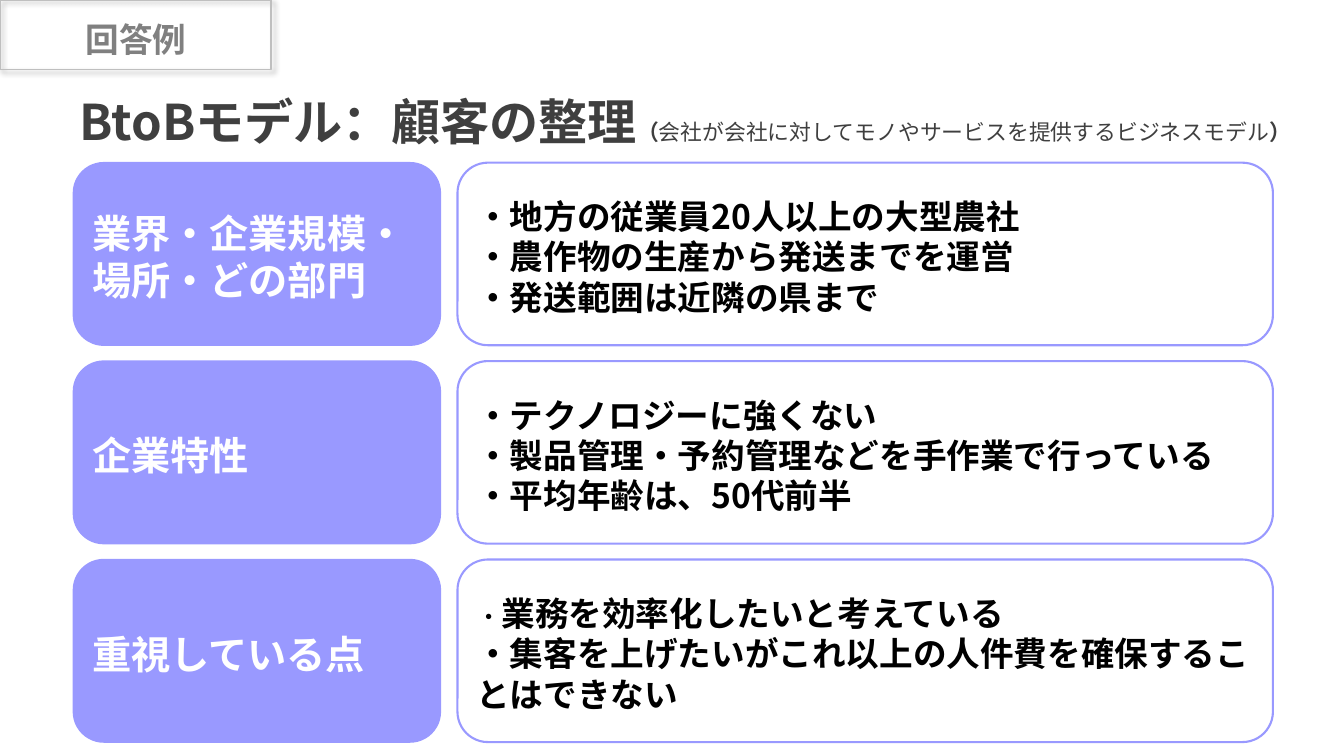
from lxml.etree import SubElement
from pptx import Presentation
from pptx.dml.color import RGBColor
from pptx.enum.shapes import MSO_SHAPE as Shape
from pptx.enum.text import MSO_ANCHOR as Anchor, MSO_AUTO_SIZE as AutoSize, PP_ALIGN as Align
from pptx.oxml.ns import qn
from pptx.util import Cm, Pt

FONT = "Noto Sans CJK JP"
COLORS = {"violet": "9999FF", "white": "FFFFFF", "black": "000000",
          "title": "3F3F3F", "tag": "808080", "border": "BFBFBF"}
LABEL = {"size": Pt(28), "bold": True, "color": "white"}
DETAIL = {"size": Pt(24), "bold": True, "color": "black"}
DOT = {"size": Pt(18), "bold": False, "color": "black"}
HEADING = {"size": Pt(35.1), "bold": True, "color": "title"}
BRACKET = {"size": Pt(15.6), "bold": True, "color": "title"}
REMARK = {"size": Pt(15.6), "bold": False, "color": "title"}
TAG = {"size": Pt(24), "bold": True, "color": "tag"}

ROWS = [
    (["業界・企業規模・", "場所・どの部門"],
     ["・地方の従業員20人以上の大型農社",
      "・農作物の生産から発送までを運営",
      "・発送範囲は近隣の県まで"]),
    (["企業特性"],
     ["・テクノロジーに強くない",
      "・製品管理・予約管理などを手作業で行っている",
      "・平均年齢は、50代前半"]),
    (["重視している点"],
     [[("・", DOT), ("業務を効率化したいと考えている", DETAIL)],
      "・集客を上げたいがこれ以上の人件費を確保することはできない"]),
]


def rgb(name):
    return RGBColor.from_string(COLORS[name])


def set_frame(frame, **formats):
    for name, value in {"word_wrap": True, "auto_size": AutoSize.NONE, **formats}.items():
        setattr(frame, name, value)


def write(frame, lines, style, align=Align.LEFT):
    for index, line in enumerate(lines):
        para = frame.paragraphs[0] if index == 0 else frame.add_paragraph()
        para.alignment = align
        for text, formats in [(line, style)] if isinstance(line, str) else line:
            span = para.add_run()
            span.text = text
            span.font.name = FONT
            SubElement(span.font._element, qn("a:ea"), typeface=FONT)
            for name, value in formats.items():
                if name == "color":
                    span.font.color.rgb = rgb(value)
                else:
                    setattr(span.font, name, value)


def add_panel(shapes, kind, box, line, width, fill=None):
    panel = shapes.add_shape(kind, *map(Cm, box))
    panel.shadow.inherit = False
    if fill:
        panel.fill.solid()
        panel.fill.fore_color.rgb = rgb(fill)
    else:
        panel.fill.background()
    panel.line.color.rgb = rgb(line)
    panel.line.width = Pt(width)
    return panel


def add_row(page, box, label, details):
    left, top, width, height = box
    label_width, gap = 9.25, 0.43
    detail_left = left + label_width + gap
    parts = [
        (label, LABEL, (left, top, label_width, height), 1, "violet"),
        (details, DETAIL, (detail_left, top, left + width - detail_left, height), 1.5, None),
    ]
    for lines, style, place, line_width, fill in parts:
        panel = add_panel(page.shapes, Shape.ROUNDED_RECTANGLE, place, "violet", line_width, fill)
        set_frame(panel.text_frame, vertical_anchor=Anchor.MIDDLE, margin_left=Cm(0.25),
                  margin_right=Cm(0.25), margin_top=Cm(0.13), margin_bottom=0)
        write(panel.text_frame, lines, style)


def add_rows(page, box):
    left, top, width, height = box
    gap = 0.4
    row_height = (height - gap * (len(ROWS) - 1)) / len(ROWS)
    for index, (label, details) in enumerate(ROWS):
        row_top = top + index * (row_height + gap)
        add_row(page, (left, row_top, width, row_height), label, details)


def add_title(page, box):
    title = page.shapes.title
    for name, value in zip(("left", "top", "width", "height"), box):
        setattr(title, name, Cm(value))
    set_frame(title.text_frame, vertical_anchor=Anchor.BOTTOM, margin_left=0,
              margin_right=0, margin_top=0, margin_bottom=0)
    spans = [("BtoBモデル：顧客の整理", HEADING), ("（", BRACKET),
             ("会社が会社に対してモノやサービスを提供するビジネスモデル", REMARK),
             ("）", BRACKET)]
    write(title.text_frame, [spans], HEADING, Align.CENTER)
    title.text_frame.paragraphs[0].line_spacing = 0.9


def add_tag(page, box):
    left, top, width, height = box
    group = page.shapes.add_group_shape()
    frame = add_panel(group.shapes, Shape.RECTANGLE, box, "border", 1)
    effects = frame._element.spPr.find(qn("a:effectLst"))
    shadow = SubElement(effects, qn("a:outerShdw"), blurRad=str(Pt(4)), dist=str(Pt(3)),
                        dir="2700000", algn="tl", rotWithShape="0")
    color = SubElement(shadow, qn("a:srgbClr"), val=COLORS["black"])
    SubElement(color, qn("a:alpha"), val="40000")
    caption = group.shapes.add_textbox(Cm(left + 0.89), Cm(top + 0.36),
                                       Cm(width - 1.75), Cm(height - 0.48))
    set_frame(caption.text_frame, auto_size=AutoSize.SHAPE_TO_FIT_TEXT)
    write(caption.text_frame, ["回答例"], TAG, Align.CENTER)


def main():
    deck = Presentation()
    deck.slide_width, deck.slide_height = Cm(33.87), Cm(19.05)
    page = deck.slides.add_slide(deck.slide_layouts[5])
    add_rows(page, (1.85, 4.1, 30.23, 14.6))
    add_title(page, (1.19, 2.06, 32.16, 1.75))
    add_tag(page, (0, 0, 6.83, 1.75))
    deck.save("out.pptx")


if __name__ == "__main__":
    main()
